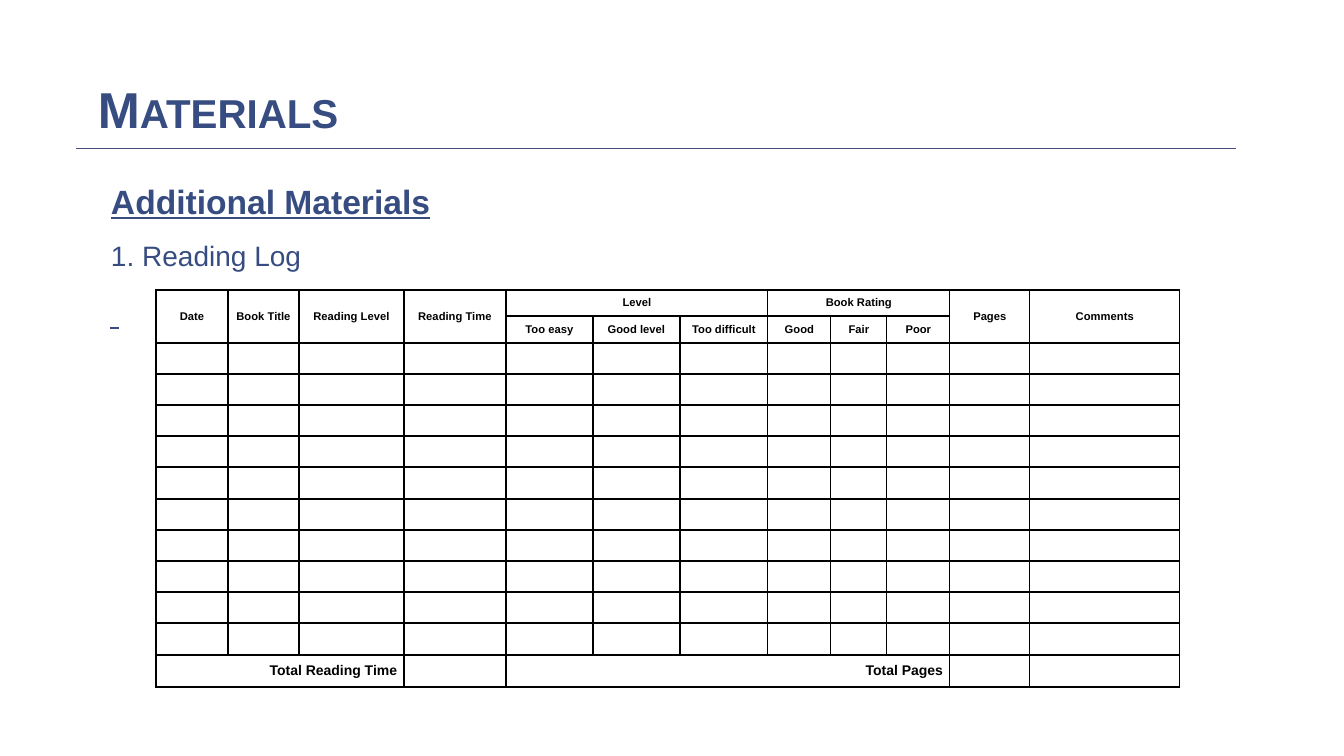
from pptx import Presentation
from pptx.dml.color import RGBColor
from pptx.enum.shapes import MSO_CONNECTOR
from pptx.enum.text import MSO_ANCHOR, PP_ALIGN
from pptx.oxml import parse_xml
from pptx.oxml.ns import nsdecls, qn
from pptx.util import Pt

STRAIGHT = MSO_CONNECTOR.STRAIGHT
TOP, MIDDLE, BOTTOM = MSO_ANCHOR.TOP, MSO_ANCHOR.MIDDLE, MSO_ANCHOR.BOTTOM
LEFT, CENTER, RIGHT = PP_ALIGN.LEFT, PP_ALIGN.CENTER, PP_ALIGN.RIGHT

TITLE = "Materials"
SUBTITLE = "Additional Materials"
ITEM = "1. Reading Log"

# Header and total cells: row, column, rows spanned, columns spanned, text
HEADERS = [
    (0, 0, 2, 1, "Date"),
    (0, 1, 2, 1, "Book Title"),
    (0, 2, 2, 1, "Reading Level"),
    (0, 3, 2, 1, "Reading Time"),
    (0, 4, 1, 3, "Level"),
    (0, 7, 1, 3, "Book Rating"),
    (0, 10, 2, 1, "Pages"),
    (0, 11, 2, 1, "Comments"),
    (1, 4, 1, 1, "Too easy"),
    (1, 5, 1, 1, "Good level"),
    (1, 6, 1, 1, "Too difficult"),
    (1, 7, 1, 1, "Good"),
    (1, 8, 1, 1, "Fair"),
    (1, 9, 1, 1, "Poor"),
]
TOTALS = [
    (12, 0, 1, 3, "Total Reading Time"),
    (12, 4, 1, 6, "Total Pages"),
]

# Lengths in px
SLIDE_SIZE = (1344, 756)
TITLE_BOX = (85, 44, 1080, 102)
BODY_BOX = (101, 156, 1199, 125)
TITLE_RULE = (76, 148, 1236, 148)
BLANK_MARK = (110, 328, 119, 328)
TABLE_ORIGIN = (156, 290)
COLUMN_WIDTHS = [72, 71, 105, 102, 87, 87, 88, 63, 56, 63, 80, 150]
ROW_HEIGHTS = [26, 27] + [31, 31, 31, 31, 32] * 2 + [32]
CELL_MARGIN = 7

THEME = {
    "font": "Arial",
    "navy": RGBColor(0x37, 0x4C, 0x81),
    "rule": RGBColor(0x41, 0x4E, 0x77),
    "black": RGBColor(0, 0, 0),
    "title": 36,
    "subtitle": 24,
    "item": 20,
    "header": 8,
    "total": 10,
}


def px(length):
    return round(length * 914400 / 100.8)


def write(paragraph, text, size, color=THEME["navy"], bold=False, underline=False,
          small_caps=False, align=LEFT, spacing=1.0):
    paragraph.alignment = align
    paragraph.line_spacing = spacing
    run = paragraph.add_run()
    run.text = text
    font = run.font
    font.name, font.size, font.color.rgb = THEME["font"], Pt(size), color
    font.bold, font.underline = bold, underline
    if small_caps:
        run._r.get_or_add_rPr().set("cap", "small")


def add_text_frame(slide, box, anchor, margins):
    frame = slide.shapes.add_textbox(*map(px, box)).text_frame
    frame.word_wrap = True
    frame.vertical_anchor = anchor
    frame.margin_left = frame.margin_right = px(margins[0])
    frame.margin_top = frame.margin_bottom = px(margins[1])
    return frame


def add_line(slide, ends, color, width):
    line = slide.shapes.add_connector(STRAIGHT, *map(px, ends))
    line.line.color.rgb = color
    line.line.width = Pt(width)
    line._element.spPr.append(parse_xml(f"<a:effectLst {nsdecls('a')}/>"))


def format_cell(cell):
    """Clear the fill, draw black borders and keep empty text small."""
    cell.margin_left = cell.margin_right = px(CELL_MARGIN)
    cell.margin_top = cell.margin_bottom = 0
    cell.vertical_anchor = MIDDLE
    cell.fill.background()
    properties = cell._tc.get_or_add_tcPr()
    for index, side in enumerate(("lnL", "lnR", "lnT", "lnB")):
        properties.insert(index, parse_xml(
            f'<a:{side} {nsdecls("a")} w="{Pt(1)}"><a:solidFill>'
            f'<a:srgbClr val="{THEME["black"]}"/></a:solidFill></a:{side}>'))
    paragraph = cell.text_frame.paragraphs[0]._p
    end = paragraph.makeelement(qn("a:endParaRPr"), {"sz": str(THEME["header"] * 100)})
    paragraph.append(end)


def add_reading_log(slide):
    size = (sum(COLUMN_WIDTHS), sum(ROW_HEIGHTS))
    frame = slide.shapes.add_table(len(ROW_HEIGHTS), len(COLUMN_WIDTHS),
                                   *map(px, TABLE_ORIGIN + size))
    table = frame.table
    table.first_row = table.horz_banding = False
    for column, width in zip(table.columns, COLUMN_WIDTHS):
        column.width = px(width)
    for row, height in zip(table.rows, ROW_HEIGHTS):
        row.height = px(height)
    for cell in table.iter_cells():
        format_cell(cell)
    for labels, size, align in ((HEADERS, THEME["header"], CENTER),
                                (TOTALS, THEME["total"], RIGHT)):
        for row, column, row_span, column_span, text in labels:
            cell = table.cell(row, column)
            if row_span * column_span > 1:
                cell.merge(table.cell(row + row_span - 1, column + column_span - 1))
            write(cell.text_frame.paragraphs[0], text, size, color=THEME["black"],
                  bold=True, align=align)


def main():
    presentation = Presentation()
    presentation.slide_width, presentation.slide_height = map(px, SLIDE_SIZE)
    slide = presentation.slides.add_slide(presentation.slide_layouts[6])

    title = add_text_frame(slide, TITLE_BOX, BOTTOM, (13, 7))
    write(title.paragraphs[0], TITLE, THEME["title"], bold=True, small_caps=True,
          spacing=0.85)
    add_line(slide, TITLE_RULE, THEME["rule"], 0.5)

    body = add_text_frame(slide, BODY_BOX, TOP, (10, 5))
    write(body.paragraphs[0], SUBTITLE, THEME["subtitle"], bold=True, underline=True,
          spacing=1.5)
    write(body.add_paragraph(), ITEM, THEME["item"], spacing=1.5)
    add_line(slide, BLANK_MARK, THEME["navy"], 1.5)

    add_reading_log(slide)
    presentation.save("out.pptx")


if __name__ == "__main__":
    main()
